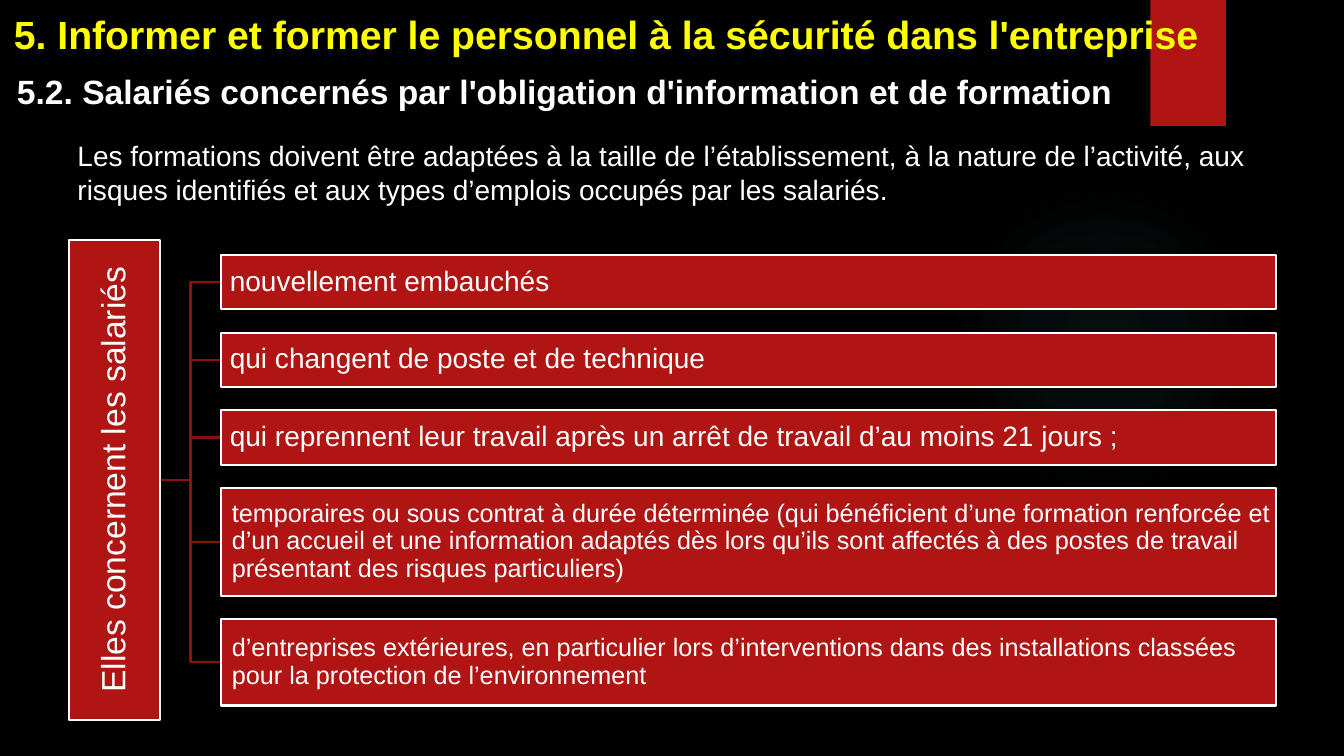
from dataclasses import dataclass

from lxml.etree import fromstring
from pptx import Presentation
from pptx.dml.color import RGBColor
from pptx.enum.shapes import MSO_SHAPE
from pptx.enum.text import MSO_ANCHOR, MSO_AUTO_SIZE, PP_ALIGN
from pptx.util import Pt

PX = 9144  # EMU per px, 100 px to the inch


@dataclass(frozen=True)
class Theme:
    font: str = "Arial"
    background: str = "000000"
    text: str = "FFFFFF"
    title: str = "FFFF00"
    accent: str = "B01513"
    branch: str = "8D110F"
    glow: str = "50B9C1"
    title_size: int = 28
    heading_size: int = 24
    body_size: int = 20
    small_size: int = 18
    line_width: float = 1.5


THEME = Theme()

# Text, height, type size and indent of each box
EMPLOYEES = [
    ("nouvellement embauchés", 54, THEME.body_size, 8),
    ("qui changent de poste et de technique", 54, THEME.body_size, 8),
    ("qui reprennent leur travail après un arrêt de travail d’au moins 21 jours ;",
     54, THEME.body_size, 8),
    ("temporaires ou sous contrat à durée déterminée (qui bénéficient d’une formation "
     "renforcée et d’un accueil et une information adaptés dès lors qu’ils sont affectés "
     "à des postes de travail présentant des risques particuliers)",
     107, THEME.small_size, 10),
    ("d’entreprises extérieures, en particulier lors d’interventions dans des "
     "installations classées pour la protection de l’environnement",
     86, THEME.small_size, 10),
]


def px(*lengths):
    return [round(length * PX) for length in lengths]


def color(code):
    return RGBColor.from_string(code)


def write(shape, text, *, size, ink=THEME.text, bold=False, align=PP_ALIGN.LEFT,
          anchor=MSO_ANCHOR.TOP, inset=None, indent=0, spacing=None):
    frame = shape.text_frame
    frame.word_wrap = True
    frame.vertical_anchor = anchor
    if inset is not None:
        margin = inset * PX
        frame.margin_left = frame.margin_right = margin
        frame.margin_top = frame.margin_bottom = margin
    para = frame.paragraphs[0]
    para.alignment = align
    if indent:
        properties = para._p.get_or_add_pPr()
        properties.set("marL", str(indent * PX))
        properties.set("indent", "0")
    if spacing:
        para.line_spacing = spacing
    span = para.add_run()
    span.text = text
    span.font.name = THEME.font
    span.font.size = Pt(size)
    span.font.bold = bold
    span.font.color.rgb = color(ink)


def add_text(page, area, text, **style):
    box = page.shapes.add_textbox(*px(*area))
    write(box, text, **style)
    box.text_frame.auto_size = MSO_AUTO_SIZE.SHAPE_TO_FIT_TEXT


def add_box(page, area, outlined=True):
    box = page.shapes.add_shape(MSO_SHAPE.RECTANGLE, *px(*area))
    box.shadow.inherit = False
    box.fill.solid()
    box.fill.fore_color.rgb = color(THEME.accent)
    if outlined:
        box.line.color.rgb = color(THEME.text)
        box.line.width = Pt(THEME.line_width)
    else:
        box.line.fill.background()
    return box


def add_glow(page, area):
    glow = page.shapes.add_shape(MSO_SHAPE.OVAL, *px(*area))
    glow.shadow.inherit = False
    glow.line.fill.background()
    stops = "".join(
        f'<a:gs pos="{position}000"><a:srgbClr val="{THEME.glow}">'
        f'<a:alpha val="{alpha}000"/></a:srgbClr></a:gs>'
        for position, alpha in [(0, 7), (36, 6), (69, 0), (100, 0)])
    gradient = fromstring(
        '<a:gradFill xmlns:a="http://schemas.openxmlformats.org/drawingml/2006/main">'
        f'<a:gsLst>{stops}</a:gsLst><a:path path="circle">'
        '<a:fillToRect l="50000" t="50000" r="50000" b="50000"/></a:path></a:gradFill>')
    glow._element.spPr.find("{*}prstGeom").addnext(gradient)


def add_branch(page, start, end):
    middle = (start[0] + end[0]) / 2
    builder = page.shapes.build_freeform(*px(*start), scale=1.0)
    corners = [(middle, start[1]), (middle, end[1]), end]
    builder.add_line_segments([px(*corner) for corner in corners], close=False)
    branch = builder.convert_to_shape()
    branch.shadow.inherit = False
    branch.fill.background()
    branch.line.color.rgb = color(THEME.branch)
    branch.line.width = Pt(THEME.line_width)


def add_hierarchy(page, items, *, root, left, top, width, gap):
    root_left, root_top, root_width, root_height = root
    root_middle = root_top + root_height / 2
    rows = []
    for text, height, size, indent in items:
        rows.append((top, text, height, size, indent))
        top += height + gap

    # Branches behind the boxes
    for row_top, _, height, _, _ in rows:
        add_branch(page, (root_left + root_width, root_middle),
                   (left, row_top + height / 2))

    # Root box, turned to read upwards
    turned = (root_left + (root_width - root_height) / 2,
              root_middle - root_width / 2, root_height, root_width)
    label = add_box(page, turned)
    label.rotation = 270
    write(label, "Elles concernent les salariés", size=THEME.heading_size,
          align=PP_ALIGN.CENTER, anchor=MSO_ANCHOR.MIDDLE, inset=2, spacing=0.9)

    # One box per group of employees
    for row_top, text, height, size, indent in rows:
        box = add_box(page, (left, row_top, width, height))
        write(box, text, size=size, anchor=MSO_ANCHOR.MIDDLE, inset=1,
              indent=indent, spacing=0.9)


def main():
    deck = Presentation()
    deck.slide_width, deck.slide_height = px(1333, 750)
    page = deck.slides.add_slide(deck.slide_layouts[6])

    # Background and decoration
    page.background.fill.solid()
    page.background.fill.fore_color.rgb = color(THEME.background)
    add_glow(page, (941, 183, 308, 308))
    add_box(page, (1141, 0, 75, 125), outlined=False)

    # Headings and introduction
    add_text(page, (4, 5, 1273, 57),
             "5. Informer et former le personnel à la sécurité dans l'entreprise",
             size=THEME.title_size, ink=THEME.title, bold=True)
    add_text(page, (7, 65, 1157, 50),
             "5.2. Salariés concernés par l'obligation d'information et de formation",
             size=THEME.heading_size, bold=True)
    add_text(page, (67, 133, 1210, 77),
             "Les formations doivent être adaptées à la taille de l’établissement, à la "
             "nature de l’activité, aux risques identifiés et aux types d’emplois occupés "
             "par les salariés.", size=THEME.body_size)

    # Employees concerned
    add_hierarchy(page, EMPLOYEES, root=(68, 238, 91, 476),
                  left=219, top=253, width=1047, gap=23)

    deck.save("out.pptx")


if __name__ == "__main__":
    main()
